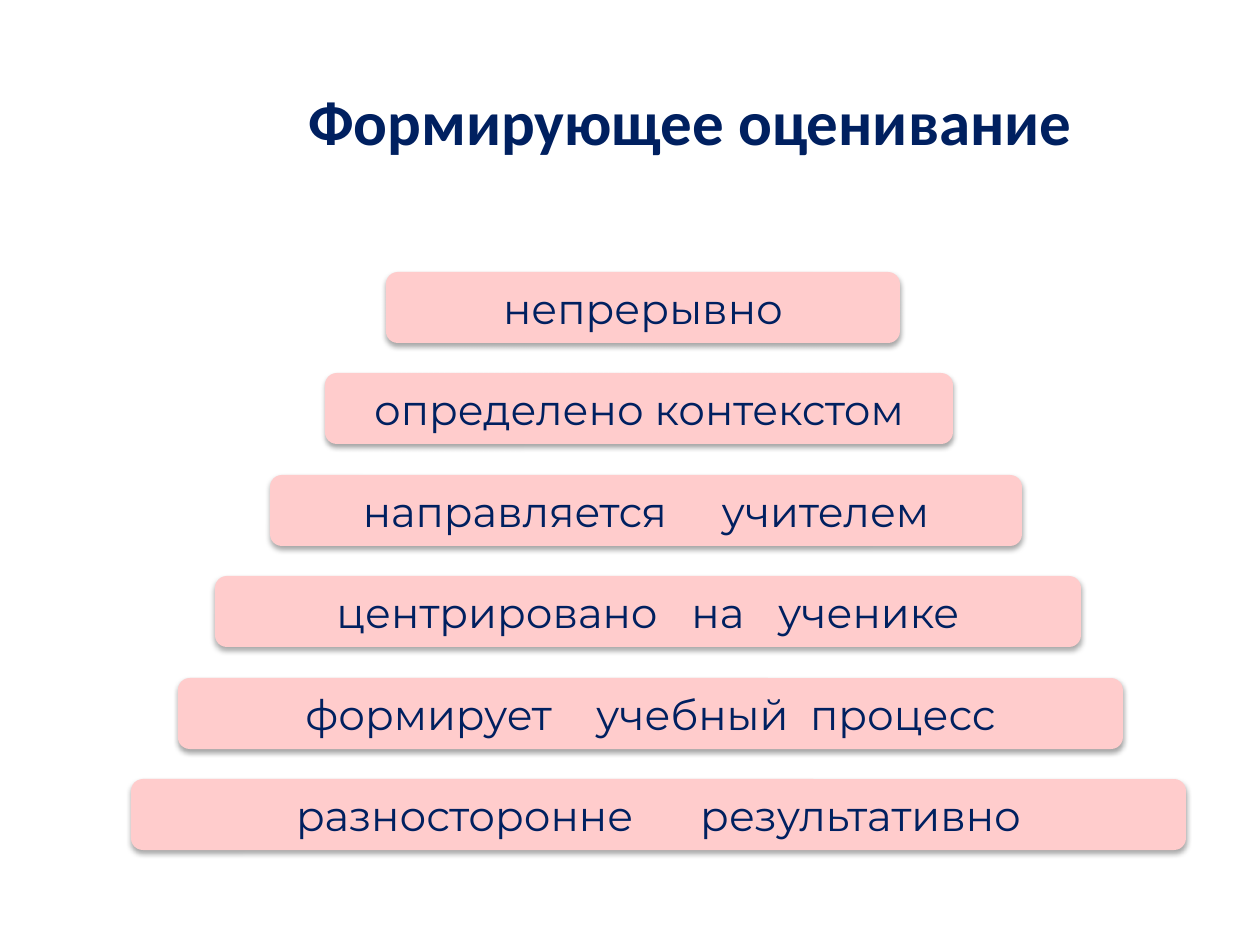
from dataclasses import dataclass

from lxml import etree
from pptx import Presentation
from pptx.dml.color import RGBColor
from pptx.enum.shapes import MSO_SHAPE
from pptx.enum.text import MSO_ANCHOR, PP_ALIGN
from pptx.oxml.ns import qn
from pptx.util import Emu, Pt

ROUNDED = MSO_SHAPE.ROUNDED_RECTANGLE
CENTER = PP_ALIGN.CENTER
MIDDLE, BOTTOM = MSO_ANCHOR.MIDDLE, MSO_ANCHOR.BOTTOM
PX_PER_INCH = 126
EMU_PER_PX = 914400 / PX_PER_INCH


@dataclass(frozen=True)
class Theme:
    ink: RGBColor = RGBColor(0x00, 0x20, 0x60)
    bar: RGBColor = RGBColor(0xFF, 0xCC, 0xCC)
    shadow: str = "000000"
    title_font: str = "Calibri"
    bar_font: str = "Montserrat"
    title_size: int = 36
    bar_size: int = 24


def px(*lengths):
    return [Emu(round(length * EMU_PER_PX)) for length in lengths]


class SlideBuilder:
    def __init__(self, slide, theme):
        self.slide = slide
        self.theme = theme

    def style_font(self, font, name, size, bold=False):
        font.name, font.size, font.bold = name, Pt(size), bold
        font.color.rgb = self.theme.ink

    def title(self, wording, *box):
        heading = self.slide.shapes.add_textbox(*px(*box))
        frame = heading.text_frame
        frame.word_wrap = True
        frame.vertical_anchor = BOTTOM
        frame.text = wording
        frame.paragraphs[0].alignment = CENTER
        self.style_font(frame.paragraphs[0].runs[0].font,
                        self.theme.title_font, self.theme.title_size, bold=True)

    def bar(self, words, gaps, *box):
        """Draw a bar; gaps are the extra points of space between words."""
        tier = self.slide.shapes.add_shape(ROUNDED, *px(*box))
        tier.fill.solid()
        tier.fill.fore_color.rgb = self.theme.bar
        tier.line.fill.background()
        self.soft_shadow(tier)
        frame = tier.text_frame
        frame.word_wrap = True
        frame.vertical_anchor = MIDDLE
        line = frame.paragraphs[0]
        line.alignment = CENTER
        line.text = words[0]
        for word, gap in zip(words[1:], gaps):
            space = line.add_run()
            space.text = " "
            space.font._element.set("spc", str(gap * 100))
            line.add_run().text = word
        for run in line.runs:
            self.style_font(run.font, self.theme.bar_font, self.theme.bar_size)

    def soft_shadow(self, shape):
        shape.shadow.inherit = False
        effects = shape._element.spPr.find(qn("a:effectLst"))
        outer = etree.SubElement(effects, qn("a:outerShdw"), blurRad=str(Pt(3.1)),
                                 dist=str(Pt(1.8)), dir="5400000", rotWithShape="0")
        color = etree.SubElement(outer, qn("a:srgbClr"), val=self.theme.shadow)
        etree.SubElement(color, qn("a:alpha"), val="35000")


# Pyramid tiers from the top: words, extra gaps in points, left, width
TIERS = [
    (["непрерывно"], [], 386, 514),
    (["определено", "контекстом"], [0], 325, 628),
    (["направляется", "учителем"], [25], 270, 752),
    (["центрировано", "на", "ученике"], [13, 13], 215, 866),
    (["формирует", "учебный", "процесс"], [19, 6], 178, 945),
    (["разносторонне", "результативно"], [32], 131, 1055),
]
TIER_TOP, TIER_PITCH, TIER_HEIGHT = 272, 101.4, 71


def main():
    deck = Presentation()
    deck.slide_width, deck.slide_height = px(1260, 945)
    builder = SlideBuilder(deck.slides.add_slide(deck.slide_layouts[6]), Theme())

    # Heading
    builder.title("Формирующее оценивание", 115, 37, 1150, 127)

    # Pyramid of qualities
    for level, (words, gaps, left, width) in enumerate(TIERS):
        top = TIER_TOP + round(level * TIER_PITCH)
        builder.bar(words, gaps, left, top, width, TIER_HEIGHT)

    deck.save("out.pptx")


if __name__ == "__main__":
    main()
